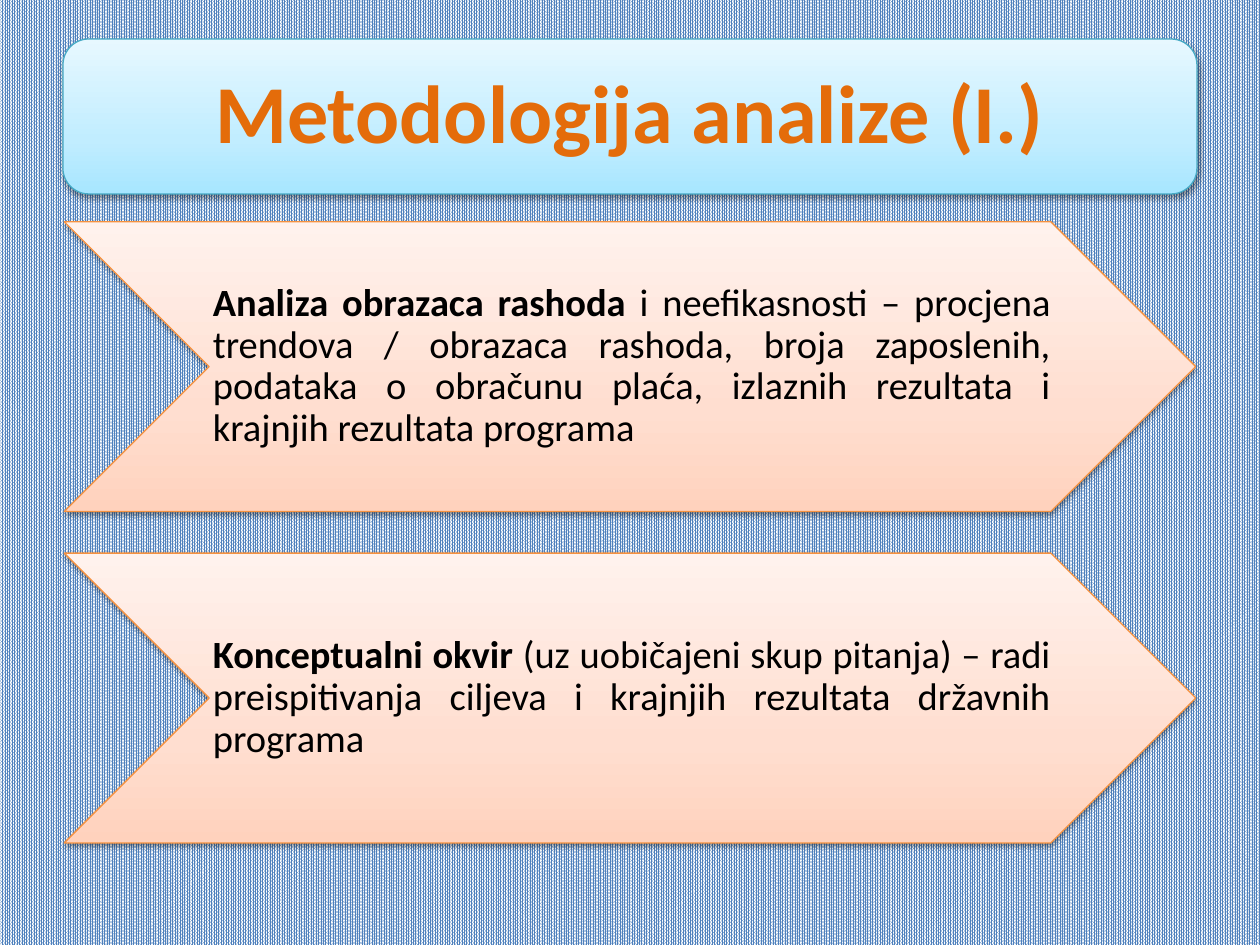
import copy

from lxml import etree
from pptx import Presentation
from pptx import util as u
from pptx.dml import color
from pptx.enum import dml, shapes, text
from pptx.oxml import ns

HUES = {
    "blue": "4F81BD", "white": "FFFFFF", "black": "000000", "title": "E46C0A",
    "sky": ("A7E6FF", "C1EDFF", "E7F8FF"), "teal": "46AAC5",
    "peach": ("FFD2BD", "FFDED0", "FFF2ED"), "orange": "F69240",
}
SLIDE = (10, 7.5)
ITEMS = [
    ("Analiza obrazaca rashoda",
     " i neefikasnosti – procjena trendova / obrazaca rashoda, broja zaposlenih, "
     "podataka o obračunu plaća, izlaznih rezultata i krajnjih rezultata programa"),
    ("Konceptualni okvir",
     " (uz uobičajeni skup pitanja) – radi preispitivanja ciljeva i krajnjih "
     "rezultata državnih programa"),
]


def rgb(name):
    """Return a colour for a hex string."""
    return color.RGBColor.from_string(name)


def apply(item, vals):
    """Set each attribute of an item from a dict."""
    for key, val in vals.items():
        setattr(item, key, val)


def place(item, box):
    """Move an item to a box given in inches."""
    apply(item, dict(zip(("left", "top", "width", "height"), map(u.Inches, box))))


def shade(shape):
    """Give a shape a soft shadow below it."""
    shape.shadow.inherit = False
    node = shape.element.spPr.find(ns.qn("a:effectLst"))
    drop = etree.SubElement(node, ns.qn("a:outerShdw"), blurRad=str(u.Pt(3.1)),
                            dist=str(u.Pt(1.6)), dir="5400000", rotWithShape="0")
    tint = etree.SubElement(drop, ns.qn("a:srgbClr"), val=HUES["black"])
    etree.SubElement(tint, ns.qn("a:alpha"), val="38000")


def panel(slide, kind, box, tones, edge):
    """Draw a preset shape with a three-tone rising gradient."""
    shape = slide.shapes.add_shape(kind, *map(u.Inches, box))
    shape.fill.gradient()
    shape.fill.gradient_angle = 90
    first = shape.element.spPr.find(".//" + ns.qn("a:gs"))
    first.addnext(copy.deepcopy(first))
    for stop, tone, pos in zip(shape.fill.gradient_stops, tones, (0, 0.35, 1)):
        stop.color.rgb = rgb(tone)
        stop.position = pos
    shape.line.color.rgb = rgb(edge)
    shape.line.width = u.Pt(0.75)
    shade(shape)


def write(slide, holder, box, runs, pads, align, font):
    """Fill a placeholder with bold and plain runs above the panels."""
    place(holder, box)
    slide.shapes.element.append(holder.element)
    frame = holder.text_frame
    sides = ("margin_left", "margin_top", "margin_right", "margin_bottom")
    apply(frame, dict(zip(sides, map(u.Inches, pads))))
    apply(frame, {"word_wrap": True, "auto_size": text.MSO_AUTO_SIZE.NONE,
                  "vertical_anchor": text.MSO_ANCHOR.MIDDLE})
    para = frame.paragraphs[0]
    apply(para, {"alignment": align, "line_spacing": 0.9, "space_before": u.Pt(0)})
    props = para._p.get_or_add_pPr()
    apply_indent = {"marL": "0", "indent": "0"}
    for key, val in apply_indent.items():
        props.set(key, val)
    etree.SubElement(props, ns.qn("a:buNone"))
    size, hue = font
    for bold, words in zip((True, False), runs):
        run = para.add_run()
        run.text = words
        apply(run.font, {"name": "Calibri", "size": u.Pt(size), "bold": bold})
        run.font.color.rgb = rgb(HUES[hue])


def banner(slide, box, words):
    """Place the rounded title panel and its title."""
    left, top, wide, high = box
    panel(slide, shapes.MSO_SHAPE.ROUNDED_RECTANGLE, box, HUES["sky"], HUES["teal"])
    pad = high / 20
    inner = (left + pad, top + pad, wide - 2 * pad, high - 2 * pad)
    write(slide, slide.shapes.title, inner, (words,), (0.2,) * 4,
          text.PP_ALIGN.CENTER, (47, "title"))


def arrows(slide, box, items, gap):
    """Stack one chevron per item in equal rows of the box."""
    left, top, wide, high = box
    row = (high - gap * (len(items) - 1)) / len(items)
    for num, runs in enumerate(items):
        y = top + num * (row + gap)
        panel(slide, shapes.MSO_SHAPE.CHEVRON, (left, y, wide, row),
              HUES["peach"], HUES["orange"])
        inner = (left + row / 2, y, wide - row, row)
        write(slide, slide.placeholders[num + 1], inner, runs,
              (0.03, 0.02, 0, 0.02), text.PP_ALIGN.JUSTIFY, (22, "black"))


def main():
    """Build and save the slide."""
    deck = Presentation()
    wide, high = SLIDE
    apply(deck, {"slide_width": u.Inches(wide), "slide_height": u.Inches(high)})
    slide = deck.slides.add_slide(deck.slide_layouts.get_by_name("Two Content"))
    fill = slide.background.fill
    fill.patterned()
    fill.pattern = dml.MSO_PATTERN.PERCENT_90
    fill.fore_color.rgb = rgb(HUES["blue"])
    fill.back_color.rgb = rgb(HUES["white"])
    banner(slide, (0.5, 0.31, 0.9 * wide, 1.23), "Metodologija analize (I.)")
    arrows(slide, (0.51, 1.76, 8.98, 4.93), ITEMS, 0.33)
    for holder in list(slide.placeholders):
        if not holder.text_frame.text:
            holder.element.getparent().remove(holder.element)
    deck.save("out.pptx")


if __name__ == "__main__":
    main()
